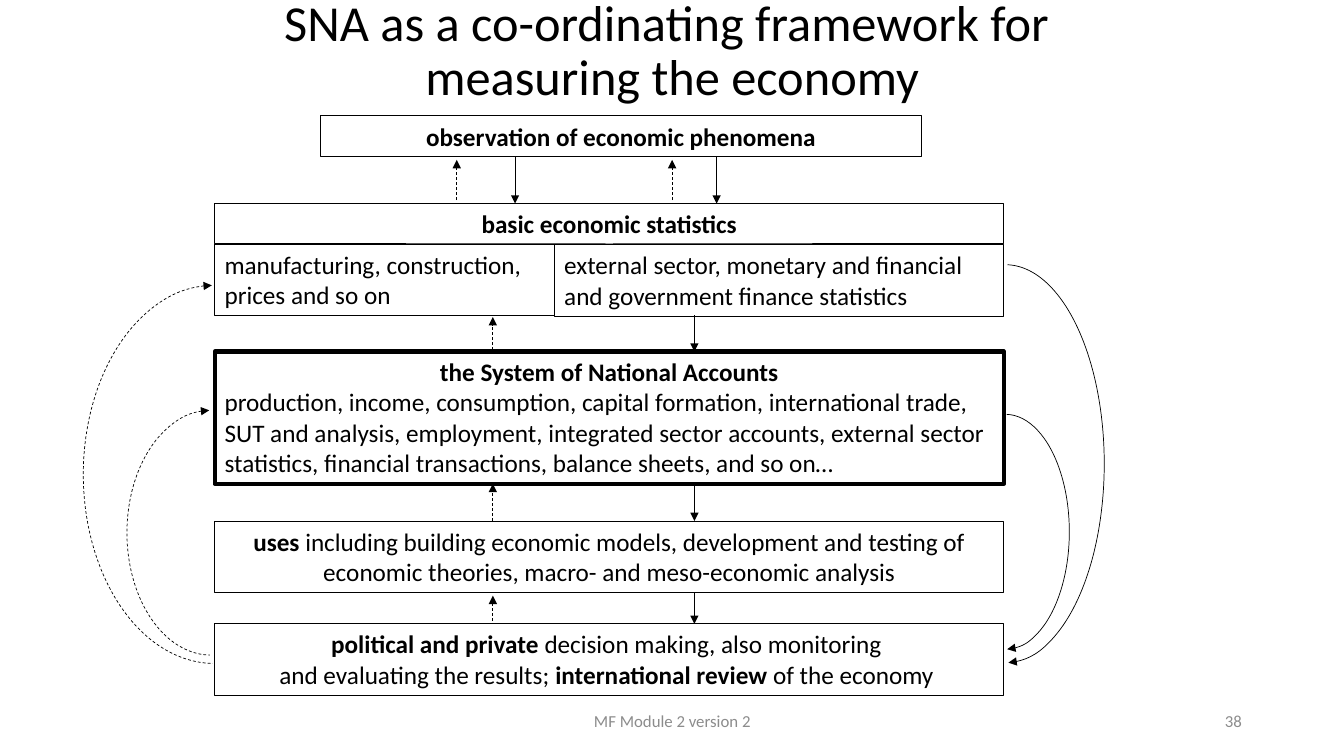
from collections import namedtuple

from pptx import Presentation
from pptx import util as u
from pptx.dml.color import RGBColor
from pptx.enum import dml, shapes, text
from pptx.oxml.ns import qn
from lxml import etree

BLACK = RGBColor(0x00, 0x00, 0x00)
GREY = RGBColor(0x8C, 0x8C, 0x8C)
FONT = "Calibri"
LEFT, CENTER, RIGHT = text.PP_ALIGN.LEFT, text.PP_ALIGN.CENTER, text.PP_ALIGN.RIGHT


class Box(namedtuple("Box", "left top width height")):
    """A rectangle in centimetres."""

    @property
    def right(self):
        return self.left + self.width

    @property
    def bottom(self):
        return self.top + self.height

    def lengths(self):
        return [u.Cm(length) for length in self]


def write(frame, paragraphs, size=18, color=BLACK, anchor=text.MSO_ANCHOR.TOP, spacing=None):
    """Fill a frame with (alignment, *spans); ** at the start of a span makes it bold."""
    frame.word_wrap = True
    frame.vertical_anchor = anchor
    for index, (align, *spans) in enumerate(paragraphs):
        para = frame.paragraphs[0] if index == 0 else frame.add_paragraph()
        para.alignment = align
        para.line_spacing = spacing
        para.font.size = u.Pt(size)
        for words in spans:
            if words == "\n":
                para.add_line_break()
                continue
            span = para.add_run()
            span.text = words.removeprefix("**")
            span.font.bold = words.startswith("**")
            span.font.name = FONT
            span.font.size = u.Pt(size)
            span.font.color.rgb = color


def add_text(page, box, *paragraphs, **style):
    label = page.shapes.add_textbox(*box.lengths())
    write(label.text_frame, paragraphs, anchor=text.MSO_ANCHOR.MIDDLE, **style)


def add_frame(page, box, *paragraphs, weight=0.75):
    frame = page.shapes.add_shape(shapes.MSO_SHAPE.RECTANGLE, *box.lengths())
    frame.shadow.inherit = False
    frame.fill.background()
    frame.line.color.rgb = BLACK
    frame.line.width = u.Pt(weight)
    write(frame.text_frame, paragraphs)


def style_arrow(shape, end, dashed):
    """Give a thin line with a triangle at 'headEnd' or 'tailEnd'."""
    shape.line.color.rgb = BLACK
    shape.line.width = u.Pt(0.5)
    if dashed:
        shape.line.dash_style = dml.MSO_LINE.DASH
    outline = shape._element.spPr.find(qn("a:ln"))
    etree.SubElement(outline, qn("a:" + end), type="triangle")


def add_arrow(page, x, start, tip, dashed=False):
    arrow = page.shapes.add_connector(
        shapes.MSO_CONNECTOR.STRAIGHT, u.Cm(x), u.Cm(start), u.Cm(x), u.Cm(tip))
    style_arrow(arrow, "tailEnd", dashed)
    etree.SubElement(arrow._element.spPr, qn("a:effectLst"))


def add_links(page, upper, lower, ups, downs, trim):
    """Join two frames by dashed arrows up and solid arrows down."""
    for x in ups:
        add_arrow(page, x, lower.top - trim, upper.bottom + trim, dashed=True)
    for x in downs:
        add_arrow(page, x, upper.bottom, lower.top)


def add_loop(page, x, top, height, reach, feedback):
    """Half an ellipse beside x: dashed up on the left, or solid down on the right."""
    turned = Box(x - height / 2, top + height / 2 - reach, height, 2 * reach)
    loop = page.shapes.add_shape(shapes.MSO_SHAPE.ARC, *turned.lengths())
    loop.adjustments[0], loop.adjustments[1] = 108.511, 215.65
    loop.rotation = 270 if feedback else 90
    loop._element.spPr.find(qn("a:xfrm")).set("flipH", "1")
    loop.shadow.inherit = False
    loop.fill.background()
    style_arrow(loop, "headEnd", feedback)


def add_statistics(page, box):
    """Heading across the box, with two frames below it."""
    heading = Box(box.left, box.top, box.width, 1.02)
    split = 8.56
    part = Box(box.left, heading.bottom, split, box.height - heading.height)
    add_frame(page, heading, (CENTER, "**basic economic statistics"))
    add_frame(page, part, (LEFT, "manufacturing, construction, prices and so on"))
    add_frame(page, part._replace(left=part.right, top=part.top + 0.02, width=box.width - split),
              (LEFT, "external sector, monetary and financial and government finance statistics"))


def add_diagram(page, box):
    observation = Box(box.left + 2.67, box.top, 15.14, 1.02)
    statistics, accounts, uses, decisions = [
        Box(box.left, box.top + offset, box.width, height)
        for offset, height in [(2.21, 2.82), (5.94, 3.33), (10.21, 1.8), (12.8, 1.8)]]

    add_frame(page, observation, (CENTER, "**observation of economic phenomena"))
    add_statistics(page, statistics)
    add_frame(page, accounts,
              (CENTER, "**the System of National Accounts"),
              (LEFT, "production, income, consumption, capital formation, international trade, "
                     "SUT and analysis, employment, integrated sector accounts, external sector "
                     "statistics, financial transactions, balance sheets, and so on…"),
              weight=3)
    add_frame(page, uses,
              (CENTER, "**uses", " including building economic models, development and testing "
                                 "of economic theories, macro- and meso-economic analysis"))
    add_frame(page, decisions,
              (CENTER, "**political and private ", "decision making, also monitoring "),
              (CENTER, "and evaluating the results; ", "**international review ",
               "of the economy "))

    up, down = box.left + 7.01, box.left + 12.09
    add_links(page, observation, statistics, [box.left + 6.1, box.left + 11.53],
              [box.left + 7.57, box.left + 12.65], trim=0.09)
    for upper, lower, trim in [(statistics, accounts, 0.04), (accounts, uses, 0),
                               (uses, decisions, 0.08)]:
        add_links(page, upper, lower, [up], [down], trim)

    for x, offset, height, reach, feedback in [
            (box.left, 4.27, 9.53, 3.31, True),
            (box.left - 0.09, 7.42, 6.17, 2.12, True),
            (box.right + 0.04, 7.52, 5.92, 1.61, False),
            (box.right + 0.04, 3.75, 10.03, 2.49, False)]:
        add_loop(page, x, box.top + offset, height, reach, feedback)


def add_footer(page, box):
    middle = Box(box.left + 8.89, box.top, 11.43, box.height)
    number = Box(box.right - 7.62, box.top, 7.62, box.height)
    add_text(page, middle, (CENTER, "MF Module 2 version 2"), size=12, color=GREY)
    add_text(page, number, (RIGHT, "38"), size=12, color=GREY)


def main():
    deck = Presentation()
    deck.slide_width, deck.slide_height = u.Cm(33.87), u.Cm(19.05)
    page = deck.slides.add_slide(deck.slide_layouts[6])
    add_text(page, Box(2.34, 0.25, 29.21, 2.13),
             (CENTER, "SNA as a co-ordinating framework for ", "\n", "measuring the economy"),
             size=36, spacing=0.9)
    add_diagram(page, Box(5.41, 2.92, 19.89, 14.6))
    add_footer(page, Box(2.34, 17.65, 29.21, 1.02))
    deck.save("out.pptx")


if __name__ == "__main__":
    main()
